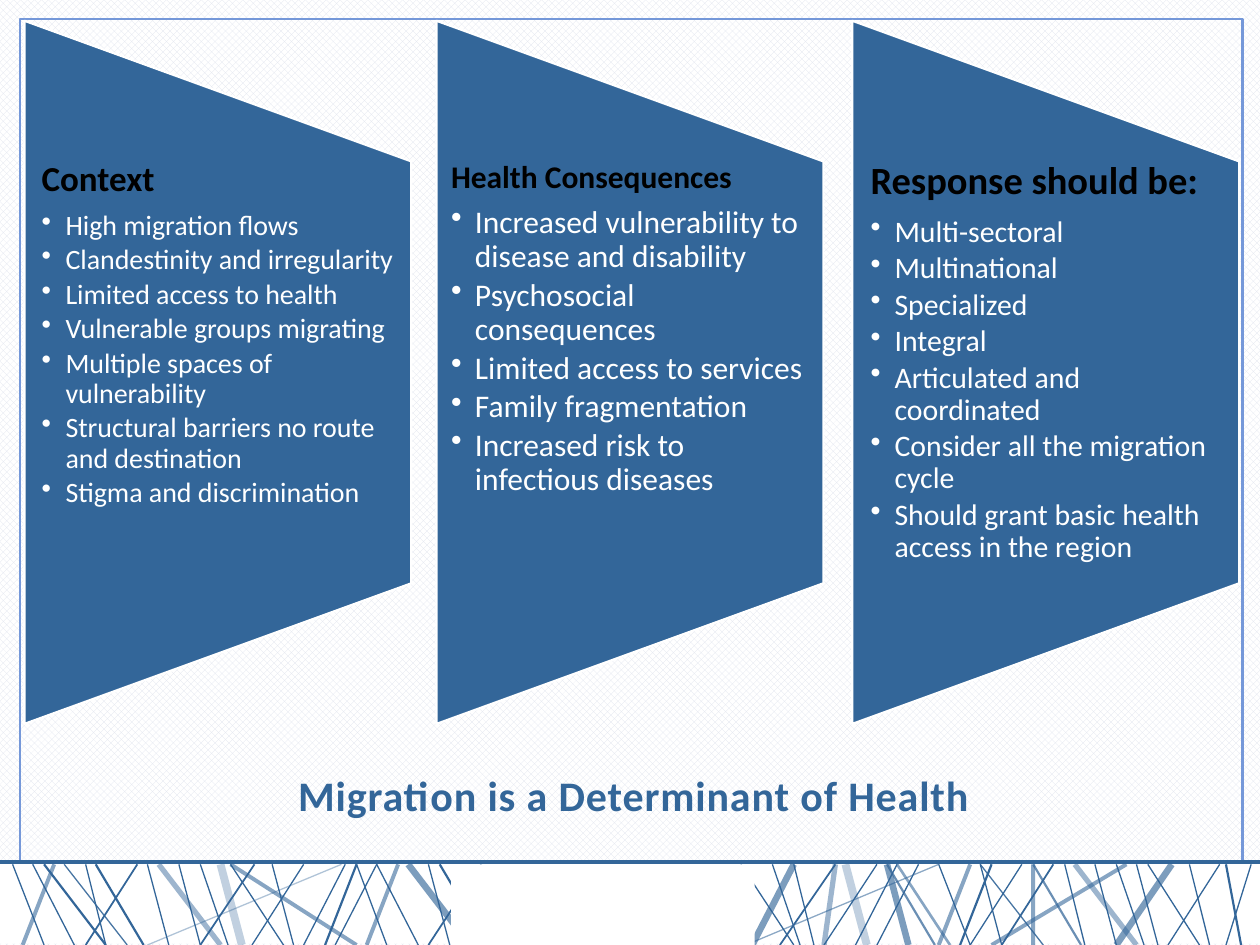
from lxml import etree
from pptx import Presentation
from pptx.dml.color import RGBColor
from pptx.enum.shapes import MSO_CONNECTOR, MSO_SHAPE
from pptx.enum.text import MSO_ANCHOR, PP_ALIGN
from pptx.oxml.ns import qn
from pptx.util import Pt

PX = 9144
RECT = MSO_SHAPE.RECTANGLE
TRAP = MSO_SHAPE.FLOWCHART_MANUAL_OPERATION
LINE = MSO_CONNECTOR.STRAIGHT
LEFT, CENTER = PP_ALIGN.LEFT, PP_ALIGN.CENTER
TOP, MIDDLE = MSO_ANCHOR.TOP, MSO_ANCHOR.MIDDLE
BLUE = RGBColor(0x33, 0x66, 0x99)
SKY = RGBColor(0x75, 0x98, 0xD9)
PALE = RGBColor(0xDF, 0xE3, 0xEE)
WHITE = RGBColor(0xFF, 0xFF, 0xFF)
BLACK = RGBColor(0, 0, 0)

deck = Presentation()
deck.slide_width, deck.slide_height = 1000 * PX, 750 * PX
slide = deck.slides.add_slide(deck.slide_layouts[6])
shapes = slide.shapes

back = slide.background.fill
back.patterned()
back.fore_color.rgb = PALE
back.back_color.rgb = WHITE
slide._element.find(".//" + qn("a:pattFill")).set("prst", "openDmnd")


def add_text(frame, text, size, color, bold=False, first=False, after=0,
             lead=1.0, bullet=False, align=LEFT, track=0):
    para = frame.paragraphs[0] if first else frame.add_paragraph()
    props = para._p.get_or_add_pPr()
    if bullet:
        props.set("marL", str(19 * PX))
        props.set("indent", str(-19 * PX))
        etree.SubElement(props, qn("a:buChar")).set("char", "•")
    para.alignment = align
    para.line_spacing = lead
    para.space_after = Pt(after)
    run = para.add_run()
    run.text = text
    run.font.name = "Calibri"
    run.font.size = Pt(size)
    run.font.bold = bold
    run.font.color.rgb = color
    if track:
        run.font._element.set("spc", str(track))


def add_line(x1, y1, x2, y2, width, alpha=100):
    line = shapes.add_connector(LINE, x1 * PX, y1 * PX, x2 * PX, y2 * PX)
    line.line.width = Pt(width)
    line.line.color.rgb = BLUE
    if alpha < 100:
        tone = line._element.spPr.find(".//" + qn("a:srgbClr"))
        etree.SubElement(tone, qn("a:alpha")).set("val", str(alpha * 1000))
    etree.SubElement(line._element.spPr, qn("a:effectLst"))


frame = shapes.add_shape(RECT, 16 * PX, 15 * PX, 970 * PX, 720 * PX)
frame.shadow.inherit = False
frame.fill.background()
frame.line.color.rgb = SKY
frame.line.width = Pt(1.5)

band = shapes.add_shape(RECT, 0, 684 * PX, 1000 * PX, 65 * PX)
band.shadow.inherit = False
band.fill.solid()
band.fill.fore_color.rgb = WHITE
band.line.fill.background()

STRAWS = {
    (0.75, 100): [
        (216, 233), (183, 225), (241, 200), (10, 35), (26, 59), (68, 84),
        (274, 241), (299, 266), (159, 181), (117, 134), (142, 159),
        (283, 307), (299, 332), (340, 357), (588, 630), (696, 654),
        (630, 646), (729, 696), (712, 679), (613, 635), (745, 770),
        (778, 795), (845, 861), (869, 886), (944, 960), (911, 952),
        (968, 927), (902, 919), (993, 973), (886, 908), (811, 770)],
    (0.75, 90): [(51, 101), (778, 828)],
    (0.75, 56): [(745, 592)],
    (0.75, 39): [(271, 117)],
    (1, 100): [(109, 68), (202, 159), (382, 340), (663, 619), (836, 795)],
    (1.25, 100): [(35, 84), (76, 114), (283, 258), (349, 387), (787, 762),
                  (973, 985)],
    (1.25, 72): [(820, 858), (704, 742)],
    (1.5, 58): [(712, 754)],
    (2.25, 58): [(43, 18), (183, 283), (316, 291), (770, 745), (820, 820),
                 (894, 787)],
    (3, 47): [(126, 175), (853, 902), (663, 654)],
    (3.75, 63): [(324, 373), (930, 886), (704, 721), (630, 597)],
    (4.5, 30): [(175, 192), (671, 688)],
}
for (width, alpha), ends in STRAWS.items():
    for x1, x2 in ends:
        add_line(x1, 686, x2, 750, width, alpha)

gap = shapes.add_shape(RECT, 358 * PX, 686 * PX, 241 * PX, 64 * PX)
gap.shadow.inherit = False
gap.fill.solid()
gap.fill.fore_color.rgb = WHITE
gap.line.fill.background()
add_line(0, 684, 1000, 684, 2.25)

title = shapes.add_textbox(82 * PX, 613 * PX, 842 * PX, 36 * PX).text_frame
title.word_wrap = True
title.vertical_anchor = MIDDLE
add_text(title, "Migration is a Determinant of Health", 24, BLUE, bold=True,
         first=True, align=CENTER, track=50)

PANELS = [
    (19, 14, 20, 16, "Context", [
        "High migration flows",
        "Clandestinity and irregularity",
        "Limited access to health",
        "Vulnerable groups migrating",
        "Multiple spaces of vulnerability",
        "Structural barriers no route and destination",
        "Stigma and discrimination"]),
    (346, 12, 18, 18, "Health Consequences", [
        "Increased vulnerability to disease and disability",
        "Psychosocial consequences",
        "Limited access to services",
        "Family fragmentation",
        "Increased risk to infectious diseases"]),
    (676, 15, 22, 17, "Response should be:", [
        "Multi-sectoral",
        "Multinational",
        "Specialized",
        "Integral",
        "Articulated and coordinated",
        "Consider all the migration cycle",
        "Should grant basic health access in the region"]),
]
WIDE, TALL = 307, 558
for left, inset, big, small, head, items in PANELS:
    panel = shapes.add_shape(TRAP, (left - (TALL - WIDE) // 2) * PX, 142 * PX,
                             TALL * PX, WIDE * PX)
    panel.rotation = 270
    panel.shadow.inherit = False
    panel.fill.solid()
    panel.fill.fore_color.rgb = BLUE
    panel.line.color.rgb = WHITE
    panel.line.width = Pt(1.25)

    body = shapes.add_textbox(left * PX, 128 * PX, WIDE * PX, 335 * PX).text_frame
    body.word_wrap = True
    body.vertical_anchor = TOP
    body.margin_left, body.margin_right = inset * PX, (inset - 2) * PX
    body.margin_top = body.margin_bottom = 0
    add_text(body, head, big, BLACK, bold=True, first=True, lead=0.9,
             after=round(big * 0.35, 1))
    for item in items:
        add_text(body, item, small, WHITE, bullet=True, lead=0.9,
                 after=round(small * 0.15, 1))

deck.save("out.pptx")
